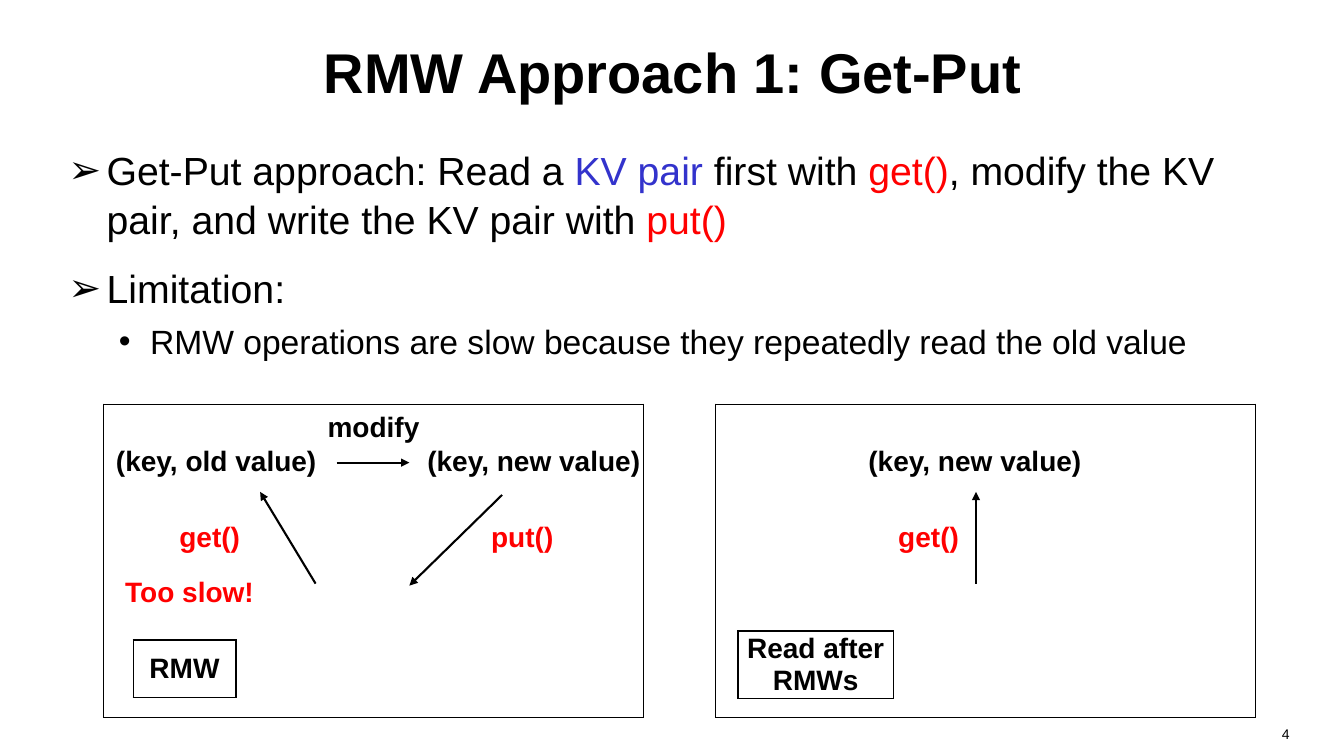
from pptx import Presentation
from pptx.dml.color import RGBColor
from pptx.enum.shapes import MSO_CONNECTOR
from pptx.enum.text import MSO_ANCHOR, PP_ALIGN
from pptx.oxml.ns import qn
from pptx.util import Pt
from lxml.etree import SubElement

PX = 9144  # EMU per px, 100 px to the inch
FONT = "Arial"
COLORS = {"black": "000000", "red": "FF0000", "blue": "3333CC"}
NO_GRID_STYLE = "{2D5ABB26-0587-4C30-8999-92F81FD0307C}"


def emu(*lengths):
    return [n * PX for n in lengths]


def add_run(p, text, size, color="black", bold=False):
    r = p.add_run()
    r.text = text
    r.font.name = FONT
    r.font.size = Pt(size)
    r.font.bold = bold
    r.font.color.rgb = RGBColor.from_string(COLORS[color])


def add_text_frame(s, box):
    tf = s.shapes.add_textbox(*emu(*box)).text_frame
    tf.word_wrap = True
    return tf


def add_cell(s, box, text="", color="black", border=False):
    """A one-cell table, used for both frames and labels."""
    table = s.shapes.add_table(1, 1, *emu(*box)).table
    table.first_row = table.horz_banding = False
    table._tbl.tblPr.find(qn("a:tableStyleId")).text = NO_GRID_STYLE
    cell = table.cell(0, 0)
    if border:
        tcPr = cell._tc.get_or_add_tcPr()
        for side in ("lnL", "lnR", "lnT", "lnB"):
            ln = SubElement(tcPr, qn(f"a:{side}"), w=str(Pt(1)))
            fill = SubElement(ln, qn("a:solidFill"))
            SubElement(fill, qn("a:srgbClr"), val=COLORS["black"])
    cell.fill.background()
    if text:
        cell.margin_left = cell.margin_right = 0
        cell.margin_top = cell.margin_bottom = 0
        cell.vertical_anchor = MSO_ANCHOR.MIDDLE
        p = cell.text_frame.paragraphs[0]
        p.alignment = PP_ALIGN.CENTER
        add_run(p, text, 20, color, bold=True)


def add_arrow(s, x1, y1, x2, y2):
    line = s.shapes.add_connector(MSO_CONNECTOR.STRAIGHT, *emu(x1, y1, x2, y2))
    line.line.width = Pt(1.5)
    line.line.color.rgb = RGBColor.from_string(COLORS["black"])
    SubElement(line.line._get_or_add_ln(), qn("a:tailEnd"), type="triangle")
    SubElement(line._element.spPr, qn("a:effectLst"))


def add_title(s, box, text):
    tf = add_text_frame(s, box)
    tf.vertical_anchor = MSO_ANCHOR.MIDDLE
    p = tf.paragraphs[0]
    p.alignment = PP_ALIGN.CENTER
    add_run(p, text, 40, bold=True)


def add_bullets(s, box, items):
    # level: bullet, text size, left margin, hanging indent, space before
    levels = [("➢", 28, 38, 38, 14), ("•", 24, 81, 31, 5)]
    tf = add_text_frame(s, box)
    for i, (level, runs) in enumerate(items):
        bullet, size, margin, hang, before = levels[level]
        p = tf.add_paragraph() if i else tf.paragraphs[0]
        p.level = level
        p.line_spacing = 1.05
        p.space_before = Pt(before if i else 0)
        pPr = p._p.get_or_add_pPr()
        pPr.set("marL", str(margin * PX))
        pPr.set("indent", str(-hang * PX))
        SubElement(pPr, qn("a:buFont"), typeface=FONT)
        SubElement(pPr, qn("a:buChar"), char=bullet)
        for text, color in runs:
            add_run(p, text, size, color)


def add_panel(s, box, labels, arrows, caption):
    """A framed diagram; label, arrow and caption offsets are from its corner."""
    x, y = box[:2]
    add_cell(s, box, border=True)
    for dx, dy, w, text, color in labels:
        add_cell(s, (x + dx, y + dy, w, 33), text, color)
    for x1, y1, x2, y2 in arrows:
        add_arrow(s, x + x1, y + y1, x + x2, y + y2)
    dx, dy, w, h, text = caption
    add_cell(s, (x + dx, y + dy, w, h), text, border=True)


def add_slide_number(s, box, number):
    p = add_text_frame(s, box).paragraphs[0]
    p.alignment = PP_ALIGN.RIGHT
    add_run(p, number, 10)


def main():
    prs = Presentation()
    prs.slide_width, prs.slide_height = emu(1333, 750)
    s = prs.slides.add_slide(prs.slide_layouts[6])

    add_title(s, (67, 8, 1200, 125), "RMW Approach 1: Get-Put")
    add_bullets(s, (58, 138, 1230, 234), [
        (0, [("Get-Put approach: Read a ", "black"), ("KV pair ", "blue"),
             ("first with ", "black"), ("get()", "red"),
             (", modify the KV pair, and write the KV pair with ", "black"),
             ("put()", "red")]),
        (0, [("Limitation:", "black")]),
        (1, [("RMW operations are slow because they repeatedly read the old value",
              "black")]),
    ])

    # Read-modify-write cycle
    add_panel(
        s, (103, 401, 535, 311),
        labels=[(210, 7, 115, "modify", "black"),
                (7, 40, 209, "(key, old value)", "black"),
                (320, 40, 213, "(key, new value)", "black"),
                (56, 116, 98, "get()", "red"),
                (366, 116, 98, "put()", "red"),
                (-2, 170, 174, "Too slow!", "red")],
        arrows=[(210, 178, 155, 87), (231, 58, 303, 58), (395, 90, 303, 180)],
        caption=(29, 234, 102, 57, "RMW"))

    # Read that follows the cycle
    add_panel(
        s, (710, 401, 535, 311),
        labels=[(135, 40, 244, "(key, new value)", "black"),
                (162, 116, 98, "get()", "red")],
        arrows=[(258, 178, 258, 87)],
        caption=(22, 225, 154, 62, "Read after RMWs"))

    add_slide_number(s, (978, 715, 311, 35), "4")
    prs.save("out.pptx")


if __name__ == "__main__":
    main()
